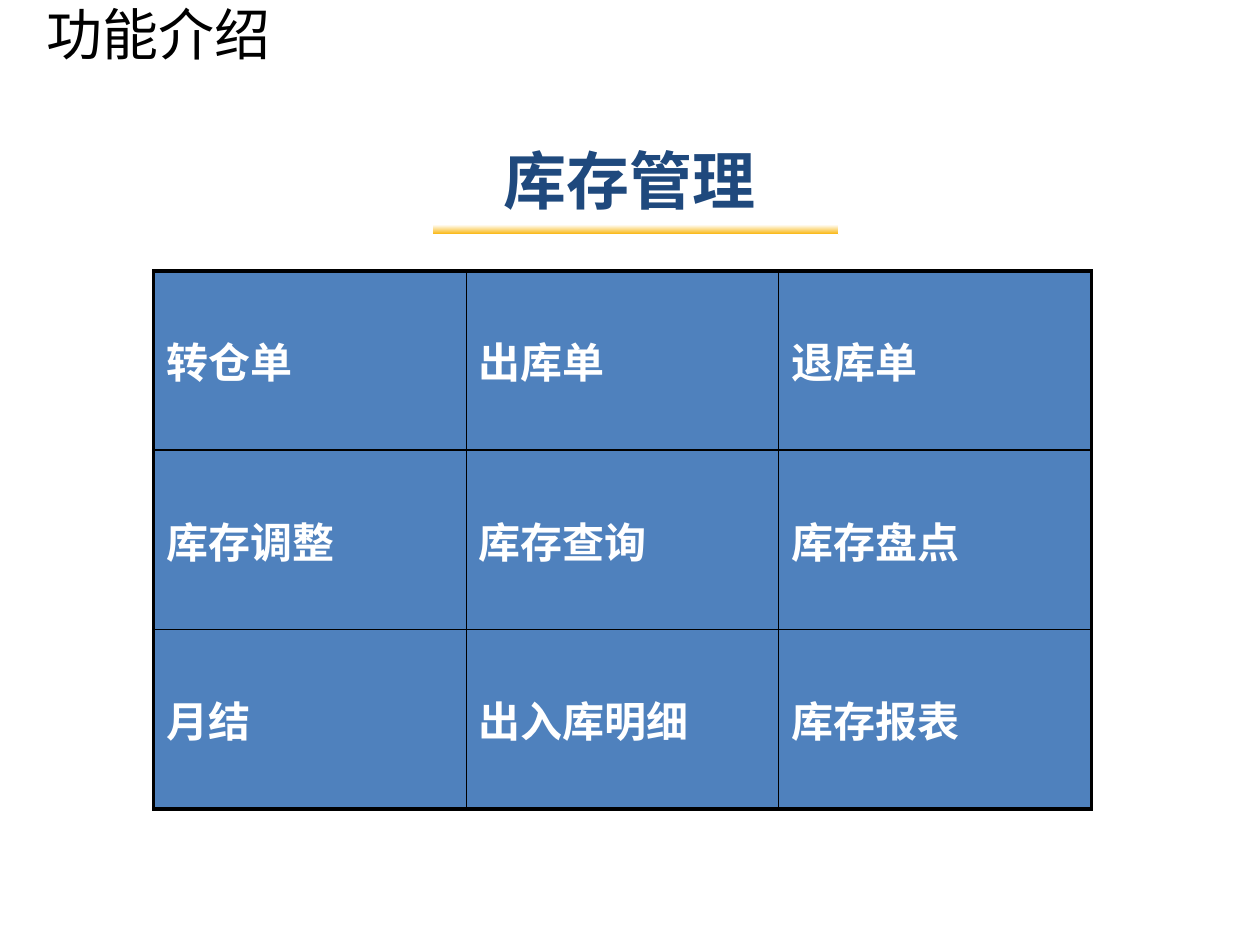
import pptx
import pptx.dml.color
import pptx.enum.shapes
import pptx.enum.text
import pptx.oxml
import pptx.oxml.ns
import pptx.util

Cm = pptx.util.Cm
Pt = pptx.util.Pt
FUNCTIONS = [
    ["转仓单", "出库单", "退库单"],
    ["库存调整", "库存查询", "库存盘点"],
    ["月结", "出入库明细", "库存报表"],
]
OUTER_LINE, INNER_LINE = 2.25, 1


def color(value):
    """Turn a hex string into a colour."""
    return pptx.dml.color.RGBColor.from_string(value)


def style_text(para, font_name, size, value, bold=False):
    """Format every run of a paragraph."""
    for span in para.runs:
        span.font.name = font_name
        span.font.size = Pt(size)
        span.font.bold = bold
        span.font.color.rgb = color(value)


def add_text(page, text, left, top, width, height):
    """Add a wrapping text box and return its frame."""
    box = page.shapes.add_textbox(Cm(left), Cm(top), Cm(width), Cm(height))
    frame = box.text_frame
    frame.word_wrap = True
    frame.text = text
    return frame


def add_page_title(page, left, top, width, height):
    """Place the page title in the given box."""
    frame = add_text(page, "功能介绍", left, top, width, height)
    frame.margin_top = 0
    style_text(frame.paragraphs[0], "Calibri", 32, "000000")


def add_heading(page, left, top, width, height):
    """Place the centred heading and its gradient underline."""
    frame = add_text(page, "库存管理", left, top, width, height)
    frame.vertical_anchor = pptx.enum.text.MSO_ANCHOR.MIDDLE
    para = frame.paragraphs[0]
    para.alignment = pptx.enum.text.PP_ALIGN.CENTER
    style_text(para, "Calibri", 36, "1F497D", bold=True)

    underline = page.shapes.add_shape(
        pptx.enum.shapes.MSO_SHAPE.RECTANGLE,
        Cm(left + 6.81), Cm(top + 2.24), Cm(8.2), Cm(0.2))
    underline.shadow.inherit = False
    underline.fill.gradient()
    underline.fill.gradient_angle = 270
    for stop, value in zip(underline.fill.gradient_stops, ["FFFFFF", "F9B407"]):
        stop.color.rgb = color(value)
    underline.line.color.rgb = color("FFFFFF")
    underline.line.width = Pt(0.75)


def add_border(cell, side, width):
    """Draw one black border of a cell."""
    line = pptx.oxml.parse_xml(
        f'<a:ln{side} {pptx.oxml.ns.nsdecls("a")} w="{Pt(width)}">'
        '<a:solidFill><a:srgbClr val="000000"/></a:solidFill>'
        f'</a:ln{side}>')
    cell._tc.get_or_add_tcPr().append(line)


def add_function_table(page, left, top, width, height):
    """Place the grid of functions with a heavier outer frame."""
    row_count, column_count = len(FUNCTIONS), len(FUNCTIONS[0])
    table = page.shapes.add_table(
        row_count, column_count, Cm(left), Cm(top), Cm(width), Cm(height)).table
    table.first_row = table.horz_banding = False
    for row, names in enumerate(FUNCTIONS):
        for column, name in enumerate(names):
            cell = table.cell(row, column)
            cell.text = name
            cell.vertical_anchor = pptx.enum.text.MSO_ANCHOR.MIDDLE
            style_text(cell.text_frame.paragraphs[0], "Arial", 24, "FFFFFF", bold=True)
            outer_sides = {
                "L": column == 0,
                "R": column == column_count - 1,
                "T": row == 0,
                "B": row == row_count - 1,
            }
            for side, is_outer in outer_sides.items():
                add_border(cell, side, OUTER_LINE if is_outer else INNER_LINE)
            cell.fill.solid()
            cell.fill.fore_color.rgb = color("4F81BD")


def main():
    """Build and save the deck."""
    deck = pptx.Presentation()
    deck.slide_width, deck.slide_height = Cm(25.4), Cm(19.05)
    page = deck.slides.add_slide(deck.slide_layouts[6])
    add_page_title(page, 0.69, 0, 22.86, 1.73)
    add_heading(page, 1.9, 2.29, 21.59, 2.64)
    add_function_table(page, 3.1, 5.46, 18.9, 10.85)
    deck.save("out.pptx")


if __name__ == "__main__":
    main()
